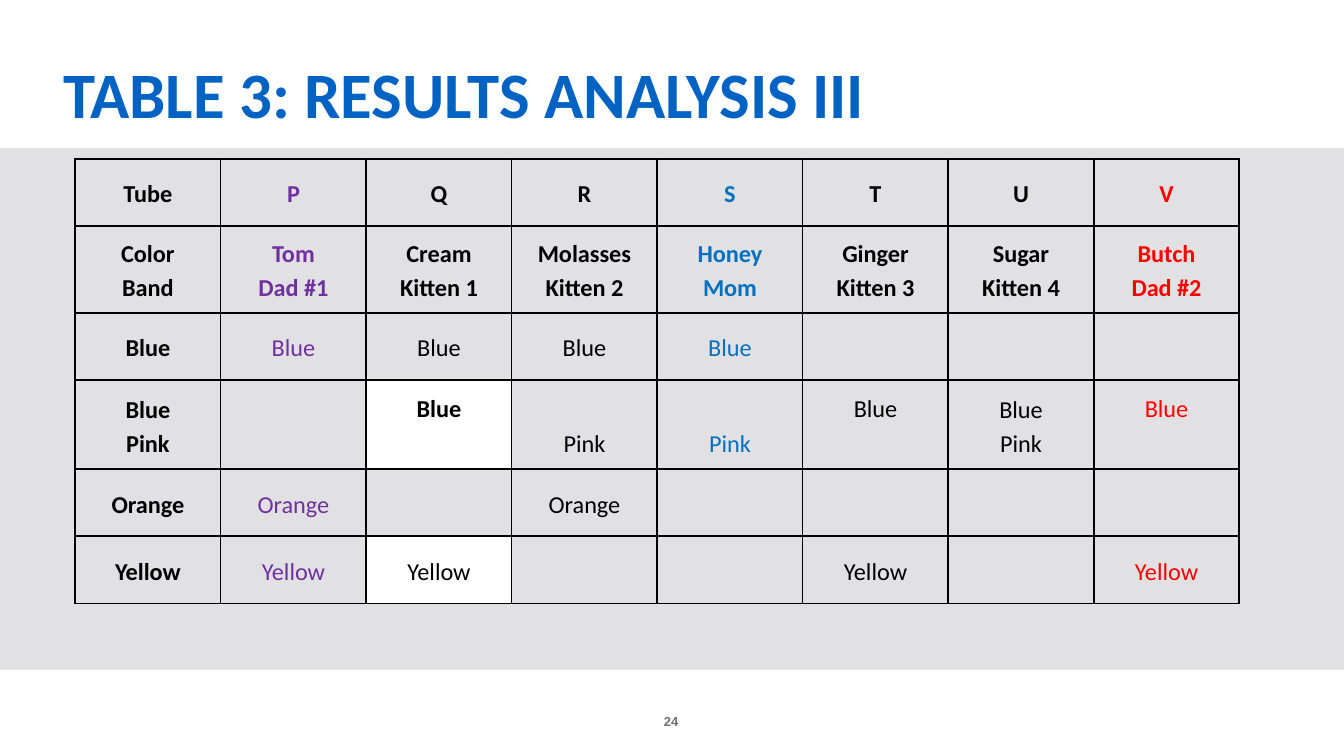
from dataclasses import dataclass

from lxml.etree import SubElement
from pptx import Presentation
from pptx.dml.color import RGBColor
from pptx.enum.shapes import MSO_SHAPE
from pptx.enum.text import MSO_ANCHOR as Anchor, MSO_AUTO_SIZE as AutoSize, PP_ALIGN as Align
from pptx.oxml.ns import qn
from pptx.util import Cm, Pt


@dataclass(frozen=True)
class Theme:
    heading: str = "0063C3"
    band: str = "E1E1E3"
    footer: str = "716F73"
    ink: str = "000000"
    highlight: str = "FFFFFF"
    first_dad: str = "7030A0"
    mom: str = "0070C0"
    second_dad: str = "FF0000"
    body_font: str = "Calibri"
    footer_font: str = "Arial"
    heading_size: float = 34.7
    cell_size: float = 13
    footer_size: float = 7
    border_width: float = 1


THEME = Theme()
PARENT_COLORS = {1: THEME.first_dad, 4: THEME.mom, 7: THEME.second_dad}
HIGHLIGHTED = {(3, 2), (5, 2)}
BOLD_RESULTS = {(3, 2)}
SPLIT_BAND_ROW = 3
COLUMN_WIDTH = 2.75
ROW_HEIGHTS = [1.27, 1.63, 1.27, 1.68, 1.27, 1.27]
RESULTS = [
    ["Tube", "P", "Q", "R", "S", "T", "U", "V"],
    ["Color\nBand", "Tom\nDad #1", "Cream\nKitten 1", "Molasses\nKitten 2",
     "Honey\nMom", "Ginger\nKitten 3", "Sugar\nKitten 4", "Butch\nDad #2"],
    ["Blue", "Blue", "Blue", "Blue", "Blue", "", "", ""],
    ["Blue\nPink", "", "Blue", "Pink", "Pink", "Blue", "Blue\nPink", "Blue"],
    ["Orange", "Orange", "", "Orange", "", "", "", ""],
    ["Yellow", "Yellow", "Yellow", "", "", "Yellow", "", "Yellow"],
]


def add_run(paragraph, text, size, color, font=THEME.body_font, bold=True):
    run = paragraph.add_run()
    run.text = text
    run.font.name = font
    run.font.size = Pt(size)
    run.font.bold = bold
    run.font.color.rgb = RGBColor.from_string(color)


def set_margins(target, horizontal, vertical):
    target.margin_left = target.margin_right = Cm(horizontal)
    target.margin_top = target.margin_bottom = Cm(vertical)


def fill_solid(target, color):
    target.fill.solid()
    target.fill.fore_color.rgb = RGBColor.from_string(color)


def add_band(slide, width):
    band = slide.shapes.add_shape(MSO_SHAPE.RECTANGLE, 0, Cm(2.8), width, Cm(9.86))
    band.shadow.inherit = False
    fill_solid(band, THEME.band)
    band.line.fill.background()


def set_title(slide, text):
    title = slide.shapes.title
    title.left, title.top, title.width, title.height = Cm(1.02), Cm(0.91), Cm(23.37), Cm(1.68)
    frame = title.text_frame
    frame.auto_size = AutoSize.NONE
    frame.vertical_anchor = Anchor.BOTTOM
    set_margins(frame, 0.18, 0.1)
    heading = frame.paragraphs[0]
    heading.alignment = Align.LEFT
    add_run(heading, text, THEME.heading_size, THEME.heading)


def add_page_number(slide, number):
    frame = slide.shapes.add_textbox(Cm(11.53), Cm(13.03), Cm(2.31), Cm(0.76)).text_frame
    frame.word_wrap = True
    frame.vertical_anchor = Anchor.BOTTOM
    set_margins(frame, 0, 0)
    line = frame.paragraphs[0]
    line.alignment = Align.CENTER
    add_run(line, number, THEME.footer_size, THEME.footer, THEME.footer_font)


def set_borders(cell):
    properties = cell._tc.get_or_add_tcPr()
    for position, side in enumerate(("a:lnL", "a:lnR", "a:lnT", "a:lnB")):
        border = SubElement(properties, qn(side), w=str(Pt(THEME.border_width)))
        SubElement(SubElement(border, qn("a:solidFill")), qn("a:srgbClr"), val=THEME.ink)
        properties.insert(position, border)


def cell_anchor(row, text):
    if row != SPLIT_BAND_ROW or "\n" in text:
        return Anchor.MIDDLE
    return Anchor.BOTTOM if text == "Pink" else Anchor.TOP


def fill_cell(cell, row, column, text):
    set_margins(cell, 0.18, 0.18)
    cell.vertical_anchor = cell_anchor(row, text)
    if (row, column) in HIGHLIGHTED:
        fill_solid(cell, THEME.highlight)
    else:
        cell.fill.background()
    set_borders(cell)
    if not text:
        return
    bold = row < 2 or column == 0 or (row, column) in BOLD_RESULTS
    color = PARENT_COLORS.get(column, THEME.ink)
    frame = cell.text_frame
    for index, words in enumerate(text.split("\n")):
        line = frame.add_paragraph() if index else frame.paragraphs[0]
        line.alignment = Align.CENTER
        line.line_spacing = 1.15
        add_run(line, words, THEME.cell_size, color, bold=bold)


def add_results_table(slide):
    column_count = len(RESULTS[0])
    table = slide.shapes.add_table(
        len(RESULTS), column_count, Cm(1.42), Cm(3),
        Cm(COLUMN_WIDTH * column_count), Cm(sum(ROW_HEIGHTS))).table
    table.first_row = table.horz_banding = False
    for column in table.columns:
        column.width = Cm(COLUMN_WIDTH)
    for row, (height, texts) in enumerate(zip(ROW_HEIGHTS, RESULTS)):
        table.rows[row].height = Cm(height)
        for column, text in enumerate(texts):
            fill_cell(table.cell(row, column), row, column, text)


def main():
    deck = Presentation()
    deck.slide_width, deck.slide_height = Cm(25.4), Cm(14.29)
    slide = deck.slides.add_slide(deck.slide_layouts[5])
    add_band(slide, deck.slide_width)
    set_title(slide, "TABLE 3: RESULTS ANALYSIS III")
    add_results_table(slide)
    add_page_number(slide, "24")
    deck.save("out.pptx")


if __name__ == "__main__":
    main()
